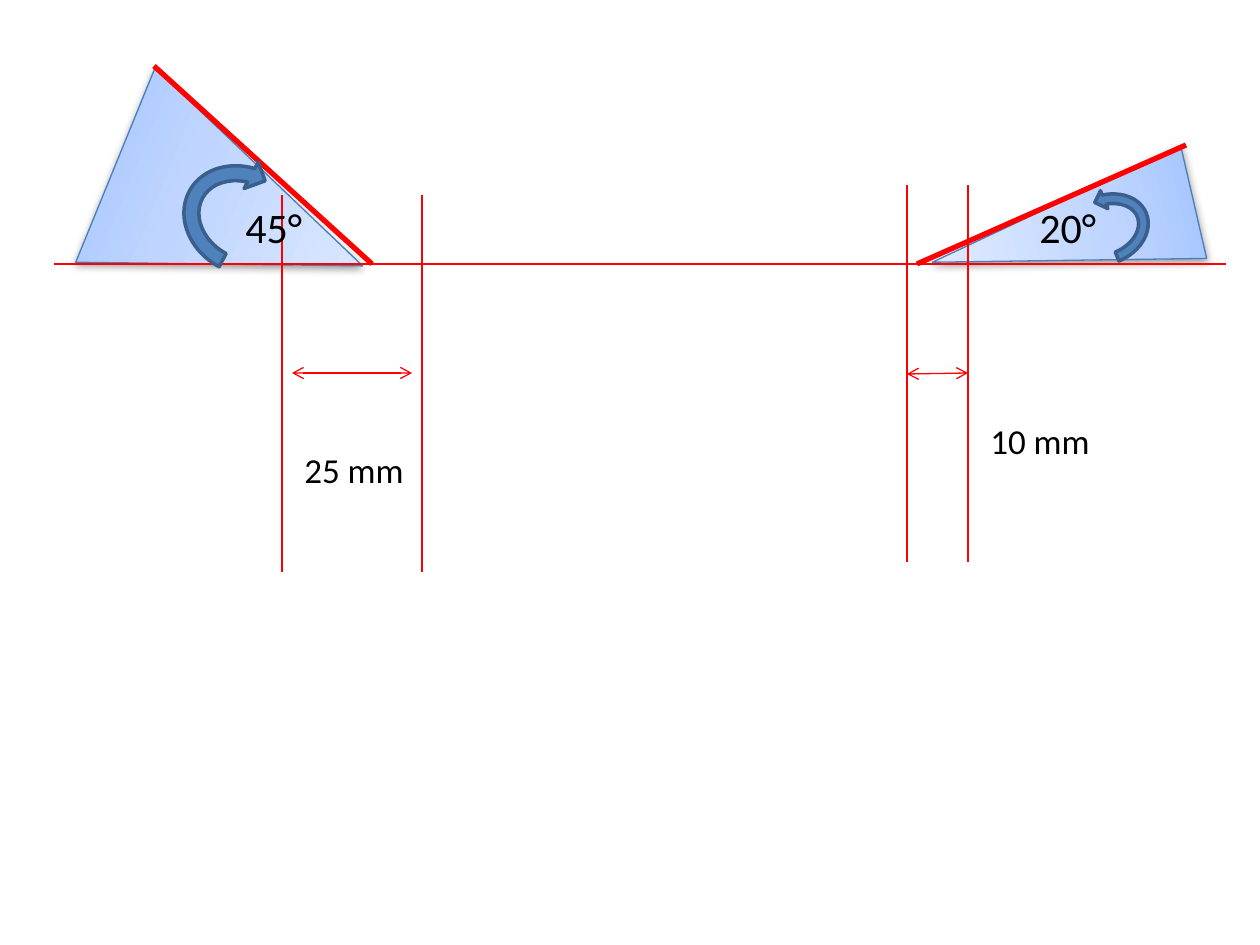
"""Draws a slide comparing two tilted wedges and their offsets on a common baseline."""
from lxml import etree
from pptx import Presentation, util as u
from pptx.dml.color import RGBColor
from pptx.enum import shapes, text
from pptx.oxml import parse_xml
from pptx.oxml.ns import qn

PX = 914400 / 126
RED = RGBColor(0xFF, 0x00, 0x00)
BLACK = RGBColor(0x00, 0x00, 0x00)
BLUE = RGBColor(0x4F, 0x81, 0xBD)
DARK_BLUE = RGBColor(0x3A, 0x5F, 0x8C)
EDGE_BLUE = RGBColor(0x4A, 0x7E, 0xBB)
SPACE = 'xmlns:a="http://schemas.openxmlformats.org/drawingml/2006/main"'
GRADIENT = f"""<a:gradFill {SPACE} rotWithShape="1"><a:gsLst>
<a:gs pos="0"><a:srgbClr val="A3C4FF"/></a:gs>
<a:gs pos="35000"><a:srgbClr val="BFD5FF"/></a:gs>
<a:gs pos="100000"><a:srgbClr val="E5EEFF"/></a:gs>
</a:gsLst><a:lin ang="16200000" scaled="1"/></a:gradFill>"""
SHADOW = f"""<a:effectLst {SPACE}><a:outerShdw blurRad="63500" dist="20000" dir="5400000" rotWithShape="0">
<a:srgbClr val="000000"><a:alpha val="38000"/></a:srgbClr></a:outerShdw></a:effectLst>"""


def add_line(x1, y1, x2, y2, width=0.75, arrows=False):
    ends = [round(value * PX) for value in (x1, y1, x2, y2)]
    line = slide.shapes.add_connector(shapes.MSO_CONNECTOR.STRAIGHT, *ends)
    line.line.color.rgb = RED
    line.line.width = u.Pt(width)
    if arrows:
        for end in ("a:headEnd", "a:tailEnd"):
            etree.SubElement(line.line._get_or_add_ln(), qn(end), type="arrow")
    etree.SubElement(line._element.spPr, qn("a:effectLst"))


def add_figure(preset, bounds, rotation, edge, width):
    figure = slide.shapes.add_shape(preset, *[round(value * PX) for value in bounds])
    figure.rotation = rotation
    figure.shadow.inherit = False
    figure.fill.solid()
    figure.fill.fore_color.rgb = BLUE
    figure.line.color.rgb = edge
    figure.line.width = u.Pt(width)
    return figure


deck = Presentation()
deck.slide_width, deck.slide_height = u.Inches(10), u.Inches(7.5)
slide = deck.slides.add_slide(deck.slide_layouts[6])

for bounds, rotation in (((134, 82, 210, 267), 112.2), ((1005, 98, 116, 268), 257)):
    wedge = add_figure(shapes.MSO_SHAPE.ISOSCELES_TRIANGLE, bounds, rotation, EDGE_BLUE, 0.75)
    properties = wedge._element.spPr
    properties.replace(properties.find(qn("a:solidFill")), parse_xml(GRADIENT))
    properties.replace(properties.find(qn("a:effectLst")), parse_xml(SHADOW))

add_line(54, 264, 1226, 264, 1.5)
add_line(372, 264, 154, 66, 3)
add_line(917, 264, 1186, 145, 3)

for x, top in ((422, 195), (968, 185), (907, 185), (282, 195)):
    add_line(x, top, x, top + 377)

for bounds, rotation, flipped in (((184, 151, 120, 139), 298.2, False), ((1067, 181, 78, 97), 67.6, True)):
    turn = add_figure(shapes.MSO_SHAPE.CIRCULAR_ARROW, bounds, rotation, DARK_BLUE, 2)
    if flipped:
        turn._element.spPr.xfrm.set("flipH", "1")

add_line(292, 373, 412, 373, arrows=True)
add_line(907, 374, 968, 373, arrows=True)

labels = (
    ("45°", 24, (233, 195, 100, 64)),
    ("20°", 24, (1027, 195, 110, 64)),
    ("10 mm", 20, (978, 413, 139, 55)),
    ("25 mm", 20, (292, 442, 129, 55)),
)
for label, size, bounds in labels:
    box = slide.shapes.add_textbox(*[round(value * PX) for value in bounds])
    box.text_frame.word_wrap = True
    box.text_frame.auto_size = text.MSO_AUTO_SIZE.SHAPE_TO_FIT_TEXT
    box.text_frame.text = label
    span = box.text_frame.paragraphs[0].runs[0]
    span.font.name = "Calibri"
    span.font.size = u.Pt(size)
    span.font.color.rgb = BLACK

deck.save("out.pptx")
